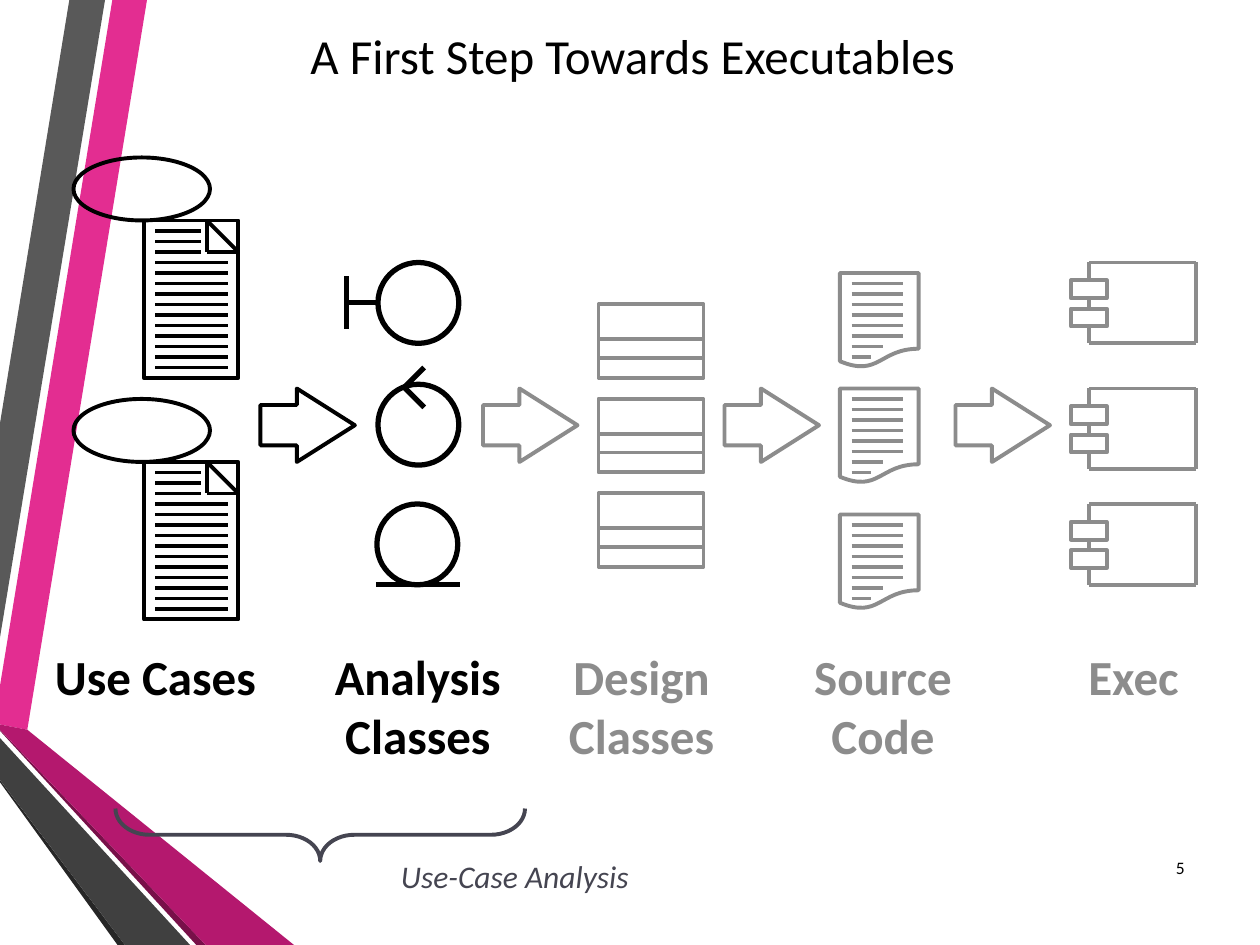
"""Build the slide showing the steps from use cases to executables."""
import pptx
import pptx.dml.color
import pptx.enum.shapes
import pptx.enum.text
import pptx.oxml
import pptx.util
from dataclasses import dataclass

PX = 7620
SHAPE = pptx.enum.shapes.MSO_SHAPE
ALIGN = pptx.enum.text.PP_ALIGN
ANCHOR = pptx.enum.text.MSO_ANCHOR


@dataclass(frozen=True)
class Theme:
    font: str = "Calibri"
    active: str = "000000"
    faded: str = "8C8C8C"
    accent: str = "454551"
    heading: int = 28
    note: int = 18
    number: int = 10
    thin: float = 2.25
    thick: float = 3


THEME = Theme()

TITLE = ("A First Step Towards Executables", (12, 17, 1181, 70))
RIBBONS = [
    ("E32D91", [(0, 653), (0, 690), (26, 695), (140, 0), (107, 0)]),
    ("595959", [(100, 0), (66, 0), (0, 403), (0, 607)]),
    ("262626", [(0, 743), (0, 745), (112, 900), (119, 900)]),
    ("781049", [(0, 695), (0, 696), (187, 900), (196, 900)]),
    ("B4186E", [(0, 695), (196, 900), (280, 900), (26, 695), (0, 690)]),
    ("404040", [(0, 743), (119, 900), (181, 900), (0, 703)]),
]
LABELS = [
    ("Use Cases", (18, 610, 260, 68), THEME.active),
    ("Analysis\vClasses", (290, 610, 216, 124), THEME.active),
    ("Design\vClasses", (510, 610, 202, 124), THEME.faded),
    ("Source\nCode", (750, 610, 182, 124), THEME.faded),
    ("Exec", (1013, 610, 133, 68), THEME.faded),
]
ARROWS = [(248, THEME.active), (460, THEME.faded),
          (690, THEME.faded), (910, THEME.faded)]
USE_CASE_TOPS = (150, 380)
DESIGN_TOPS = (290, 380, 470)
SOURCE_TOPS = (260, 370, 490)
EXEC_TOPS = (250, 370, 480)
ANALYSIS_ICONS = [
    ((360, 250), [(330, 263, 330, 313), (330, 288, 360, 288)]),
    ((360, 366), [(384, 370, 404, 350), (404, 388, 384, 368)]),
    ((359, 480), [(358, 557, 438, 557)]),
]


def rgb(color):
    return pptx.dml.color.RGBColor.from_string(color)


def scaled(lengths):
    return [length * PX for length in lengths]


def outline(shapes, kind, bounds, color, width=THEME.thin):
    shape = shapes.add_shape(kind, *scaled(bounds))
    shape.shadow.inherit = False
    shape.fill.background()
    shape.line.color.rgb = rgb(color)
    shape.line.width = pptx.util.Pt(width)
    return shape


def stroke(shapes, ends, color, width=THEME.thin):
    line = shapes.add_connector(pptx.enum.shapes.MSO_CONNECTOR.STRAIGHT, *scaled(ends))
    line.line.color.rgb = rgb(color)
    line.line.width = pptx.util.Pt(width)
    properties = line._element.spPr
    properties.append(pptx.oxml.parse_xml(
        '<a:effectLst xmlns:a="http://schemas.openxmlformats.org/drawingml/2006/main"/>'))


def write(box, text, size, color, align=ALIGN.CENTER, anchor=ANCHOR.TOP,
          bold=False, italic=False):
    frame = box.text_frame
    frame.text = text
    frame.word_wrap = True
    frame.vertical_anchor = anchor
    for para in frame.paragraphs:
        para.alignment = align
        para.font.name = THEME.font
        para.font.size = pptx.util.Pt(size)
        para.font.bold = bold
        para.font.italic = italic
        para.font.color.rgb = rgb(color)


def add_ribbon(shapes, color, points):
    builder = shapes.build_freeform(*points[0], scale=PX)
    builder.add_line_segments(points[1:], close=True)
    ribbon = builder.convert_to_shape()
    ribbon.shadow.inherit = False
    ribbon.fill.solid()
    ribbon.fill.fore_color.rgb = rgb(color)
    ribbon.line.fill.background()


def add_use_case(shapes, top):
    page_top = top + 60
    outline(shapes, SHAPE.OVAL, (70, top, 130, 60), THEME.active)
    outline(shapes, SHAPE.RECTANGLE, (137, page_top, 90, 150), THEME.active)
    fold = [(197, 0, 227, 30), (197, 0, 197, 30), (227, 30, 197, 30)]
    rows = [(148, 10 * row, 191 if row <= 3 else 217, 10 * row) for row in range(1, 15)]
    for x1, y1, x2, y2 in fold + rows:
        stroke(shapes, (x1, page_top + y1, x2, page_top + y2), THEME.active)


def add_design_class(shapes, top):
    outline(shapes, SHAPE.RECTANGLE, (570, top, 100, 70), THEME.faded)
    for offset in (33, 51):
        stroke(shapes, (570, top + offset, 670, top + offset), THEME.faded)


def add_source_file(shapes, top):
    outline(shapes, SHAPE.FLOWCHART_DOCUMENT, (800, top, 75, 90), THEME.faded)
    for row, right in enumerate([860] * 6 + [841, 830], 1):
        stroke(shapes, (811, top + 10 * row, right, top + 10 * row), THEME.faded)


def add_component(shapes, top):
    edges = [(1139, 0, 1139, 77), (1139, 0, 1037, 0), (1139, 77, 1037, 77),
             (1037, 0, 1037, 17), (1037, 33, 1037, 44), (1037, 61, 1037, 77)]
    for x1, y1, x2, y2 in edges:
        stroke(shapes, (x1, top + y1, x2, top + y2), THEME.faded)
    for offset in (17, 44):
        outline(shapes, SHAPE.RECTANGLE, (1020, top + offset, 34, 17), THEME.faded)


def main():
    deck = pptx.Presentation()
    deck.slide_width, deck.slide_height = scaled((1200, 900))
    page = deck.slides.add_slide(deck.slide_layouts[5])
    shapes = page.shapes

    title = shapes.title
    text, bounds = TITLE
    title.left, title.top, title.width, title.height = scaled(bounds)
    write(title, text, THEME.heading, THEME.active, anchor=ANCHOR.MIDDLE)

    ribbons = shapes.add_group_shape().shapes
    for color, points in RIBBONS:
        add_ribbon(ribbons, color, points)

    for left, color in ARROWS:
        arrow = outline(shapes, SHAPE.RIGHT_ARROW, (left, 370, 90, 70), color)
        arrow.adjustments[0], arrow.adjustments[1] = 0.55, 0.79

    for add_icon, tops in ((add_use_case, USE_CASE_TOPS), (add_design_class, DESIGN_TOPS),
                           (add_source_file, SOURCE_TOPS), (add_component, EXEC_TOPS)):
        for top in tops:
            add_icon(shapes.add_group_shape().shapes, top)
    for corner, strokes in ANALYSIS_ICONS:
        icon = shapes.add_group_shape().shapes
        outline(icon, SHAPE.OVAL, (*corner, 77, 77), THEME.active, THEME.thick)
        for ends in strokes:
            stroke(icon, ends, THEME.active, THEME.thick)

    for text, bounds, color in LABELS:
        write(shapes.add_textbox(*scaled(bounds)), text, THEME.heading, color, bold=True)

    brace = outline(shapes, SHAPE.LEFT_BRACE, (280, 600, 50, 390), THEME.accent)
    brace.rotation = 270
    brace.adjustments[0], brace.adjustments[1] = 0.65, 0.5
    write(shapes.add_textbox(*scaled((370, 810, 277, 48))), "Use-Case Analysis",
          THEME.note, THEME.accent, align=ALIGN.LEFT, italic=True)
    write(shapes.add_textbox(*scaled((1084, 802, 56, 48))), "5",
          THEME.number, THEME.active, align=ALIGN.RIGHT, anchor=ANCHOR.MIDDLE)

    deck.save("out.pptx")


if __name__ == "__main__":
    main()
